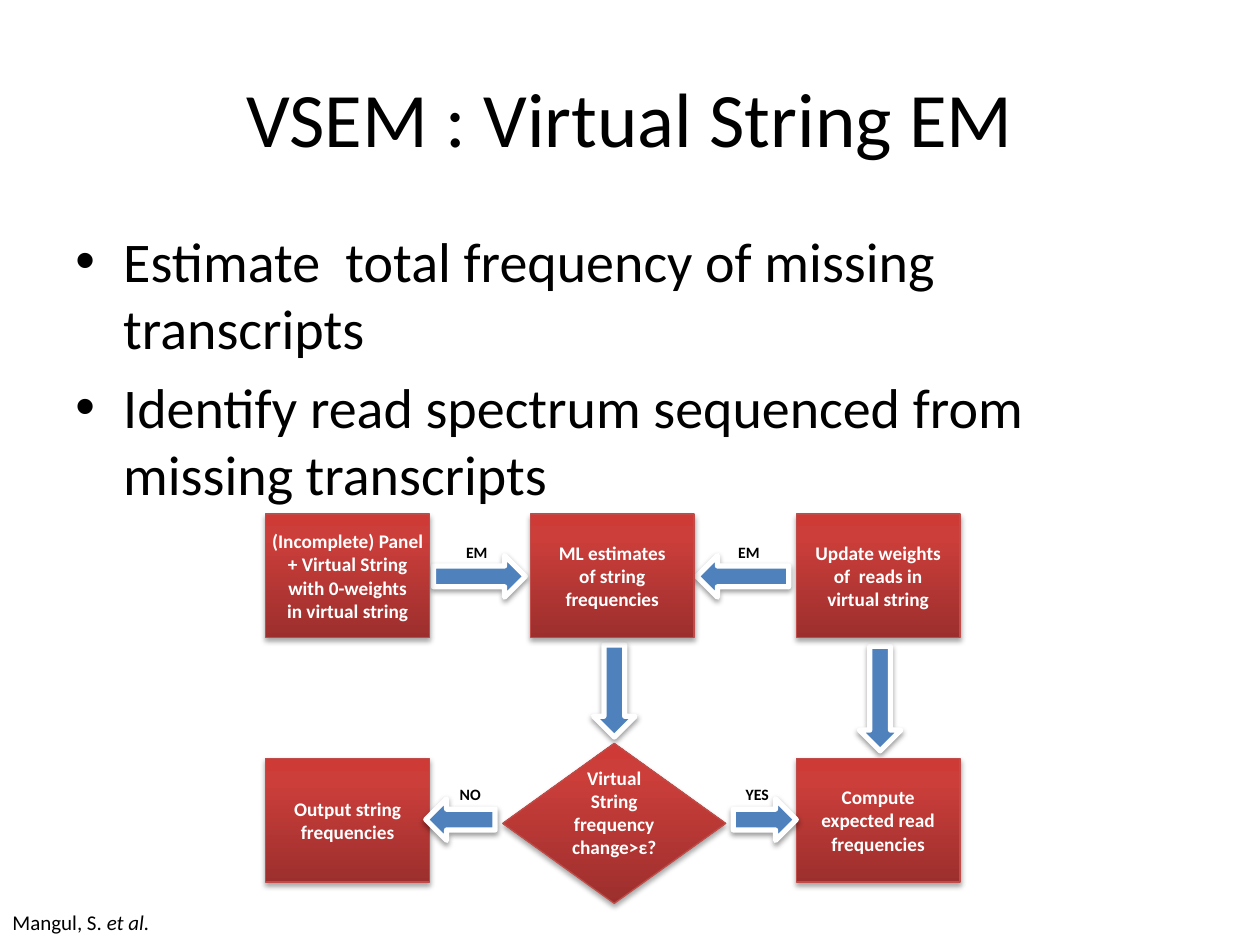
"""Build the VSEM slide: a title, two bullets and a flowchart."""
from copy import deepcopy

from lxml import etree
from pptx import Presentation
from pptx.dml.color import RGBColor
from pptx.enum.shapes import MSO_SHAPE as SHAPE
from pptx.enum.text import MSO_ANCHOR as ANCHOR, PP_ALIGN as ALIGN
from pptx.oxml.ns import qn
from pptx.util import Inches, Pt

COLORS = {
    "text": "000000",
    "white": "FFFFFF",
    "arrow": "4F81BD",
    "edge": "BF4C48",
    "shadow": "000000",
}
GRADIENT = [(0, "9C2F2D"), (0.8, "CB3E3A"), (1, "CE3B37")]
COLS = (2.11, 4.21, 6.32)
ROWS = (4.08, 6.02)
BOX_W, BOX_H = 1.3, 0.98
ARROW_H = 0.33


class SlideBuilder:
    """Hold the style and the current slide."""

    font = "Calibri"

    def __init__(self, prs):
        self.slide = prs.slides.add_slide(prs.slide_layouts[5])

    def style(self, p, size, color="text", bold=False, align=ALIGN.LEFT):
        """Format every run of a paragraph."""
        p.alignment = align
        for r in p.runs:
            r.font.name = self.font
            r.font.size = Pt(size)
            r.font.bold = bold
            r.font.color.rgb = RGBColor.from_string(COLORS[color])

    def title(self, text, *at):
        """Place and fill the title placeholder."""
        sp = self.slide.shapes.title
        sp.left, sp.top, sp.width, sp.height = map(Inches, at)
        tf = sp.text_frame
        tf.text = text
        tf.vertical_anchor = ANCHOR.MIDDLE
        self.style(tf.paragraphs[0], 44, align=ALIGN.CENTER)

    def textbox(self, text, size, *at, bold=False):
        """Add a wrapping text box and return its text frame."""
        tf = self.slide.shapes.add_textbox(*map(Inches, at)).text_frame
        tf.word_wrap = True
        tf.text = text
        for p in tf.paragraphs:
            self.style(p, size, bold=bold)
        return tf

    def bullets(self, items, *at):
        """Add a bulleted list with hanging indents."""
        tf = self.textbox("\n".join(items), 32, *at)
        for p in tf.paragraphs:
            p.space_before = Pt(6.4)
            pPr = p._p.get_or_add_pPr()
            pPr.set("marL", str(Inches(0.38)))
            pPr.set("indent", str(Inches(-0.38)))
            etree.SubElement(pPr, qn("a:buFont"), typeface="Arial")
            etree.SubElement(pPr, qn("a:buChar"), char="•")

    def citation(self, authors, suffix, *at):
        """Add a citation whose suffix is italic."""
        p = self.textbox(authors, 12, *at).paragraphs[0]
        r = p.add_run()
        r.text = suffix
        self.style(p, 12)
        r.font.italic = True

    def shape(self, kind, at, line, width, alpha, dist):
        """Add an outlined preset shape with a soft shadow below it."""
        sp = self.slide.shapes.add_shape(kind, *map(Inches, at))
        sp.line.color.rgb = RGBColor.from_string(COLORS[line])
        sp.line.width = Pt(width)
        sp.shadow.inherit = False
        effects = sp._element.spPr.find(qn("a:effectLst"))
        shadow = etree.SubElement(
            effects, qn("a:outerShdw"), blurRad=str(Pt(3.1)),
            dist=str(Pt(dist)), dir="5400000", rotWithShape="0")
        color = etree.SubElement(shadow, qn("a:srgbClr"), val=COLORS["shadow"])
        etree.SubElement(color, qn("a:alpha"), val=str(alpha * 1000))
        return sp

    def node(self, text, *at, kind=SHAPE.RECTANGLE, wrap=False, bottom=0.04):
        """Add a red gradient flowchart node."""
        sp = self.shape(kind, at, "edge", 0.75, 35, 1.8)
        sp.fill.gradient()
        sp.fill.gradient_angle = 90
        first = sp._element.spPr.find(".//" + qn("a:gs"))
        first.addnext(deepcopy(first))
        for stop, (position, color) in zip(sp.fill.gradient_stops, GRADIENT):
            stop.position = position
            stop.color.rgb = RGBColor.from_string(color)
        tf = sp.text_frame
        tf.text = text
        tf.word_wrap = wrap
        tf.vertical_anchor = ANCHOR.MIDDLE
        tf.margin_left = tf.margin_right = Inches(0.09)
        tf.margin_top, tf.margin_bottom = Inches(0.04), Inches(bottom)
        for p in tf.paragraphs:
            self.style(p, 11, "white", True, ALIGN.CENTER)

    def arrow(self, left, top, length, flip=False, rotation=0):
        """Add a blue block arrow."""
        at = (left, top, length, ARROW_H)
        sp = self.shape(SHAPE.RIGHT_ARROW, at, "white", 3, 38, 1.6)
        sp.fill.solid()
        sp.fill.fore_color.rgb = RGBColor.from_string(COLORS["arrow"])
        sp.rotation = rotation
        if flip:
            sp._element.spPr.find(qn("a:xfrm")).set("flipH", "1")

    def label(self, text, left, top):
        """Add a small bold arrow label."""
        self.textbox(text, 9, left, top, 0.45, 0.25, bold=True)


def main():
    """Compose and save the slide."""
    prs = Presentation()
    prs.slide_width, prs.slide_height = Inches(10), Inches(7.5)
    s = SlideBuilder(prs)
    s.title("VSEM : Virtual String EM", 0.5, 0.3, 9, 1.25)
    s.bullets(["Estimate  total frequency of missing transcripts",
               "Identify read spectrum sequenced from missing transcripts"],
              0.5, 1.75, 9, 4.95)
    s.citation("Mangul, S. ", "et al.", 0, 7.17, 10, 0.3)

    for left, top, flip in [(3.44, 4.41, False), (5.53, 4.41, True)]:
        s.arrow(left, top, 0.73, flip)
    s.arrow(4.51, 5.32, 0.73, rotation=90)
    s.arrow(6.57, 5.38, 0.83, rotation=90)

    nodes = [
        (0, 0, "(Incomplete) Panel\n+ Virtual String\nwith 0-weights\n"
               "in virtual string"),
        (1, 0, "ML estimates\nof string\nfrequencies"),
        (2, 0, "Update weights\nof  reads in\nvirtual string"),
        (0, 1, "Output string\nfrequencies"),
        (2, 1, "Compute\nexpected read\nfrequencies"),
    ]
    for col, row, text in nodes:
        s.node(text, COLS[col], ROWS[row], BOX_W, BOX_H)
    s.node("Virtual String frequency change>ε?", 3.99, 5.9, 1.77, 1.27,
           kind=SHAPE.DIAMOND, wrap=True, bottom=0.22)

    s.arrow(3.38, 6.34, 0.55, flip=True)
    s.arrow(5.82, 6.34, 0.5)
    for text, left, top in [("EM", 3.6, 4.26), ("EM", 5.76, 4.26),
                            ("NO", 3.55, 6.18), ("YES", 5.82, 6.18)]:
        s.label(text, left, top)
    prs.save("out.pptx")


if __name__ == "__main__":
    main()
